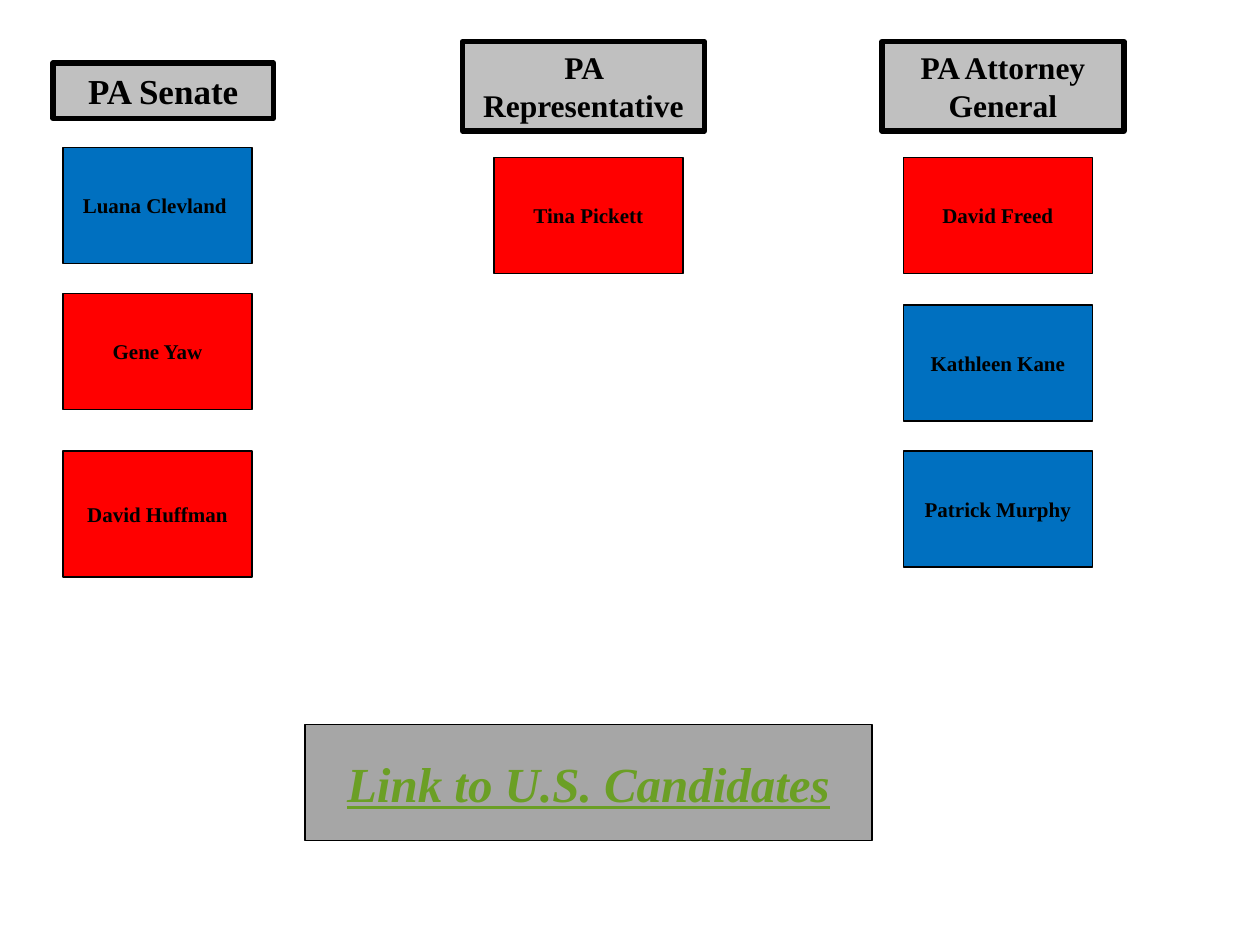
from dataclasses import dataclass

from pptx import Presentation
from pptx.dml.color import RGBColor
from pptx.enum.shapes import MSO_SHAPE
from pptx.enum.text import MSO_ANCHOR, MSO_AUTO_SIZE, PP_ALIGN
from pptx.util import Inches, Pt

RECTANGLE = MSO_SHAPE.RECTANGLE
BUTTON = MSO_SHAPE.ACTION_BUTTON_CUSTOM
TOP, MIDDLE = MSO_ANCHOR.TOP, MSO_ANCHOR.MIDDLE
GROW = MSO_AUTO_SIZE.SHAPE_TO_FIT_TEXT
CENTER = PP_ALIGN.CENTER

FONT = "Times New Roman"
COLORS = {
    "black": "000000",
    "header": "C0C0C0",
    "democrat": "0070C0",
    "republican": "FF0000",
    "link_fill": "A6A6A6",
    "link_text": "6B9F25",
}
BUTTON_WIDTH, BUTTON_HEIGHT = 1.5, 0.92


@dataclass
class Box:
    text: str
    left: float
    top: float
    width: float
    height: float
    fill: str
    size: int


@dataclass
class Candidate:
    name: str
    party: str
    top: float
    height: float = BUTTON_HEIGHT


@dataclass
class Office:
    header: Box
    button_left: float
    candidates: list[Candidate]


OFFICES = [
    Office(Box("PA Senate", 0.42, 0.5, 1.75, 0.44, "header", 20), 0.5, [
        Candidate("Luana Clevland ", "democrat", 1.17),
        Candidate("Gene Yaw", "republican", 2.33),
        Candidate("David Huffman", "republican", 3.58, 1),
    ]),
    Office(Box("PA Representative", 3.67, 0.33, 1.92, 0.71, "header", 18), 3.92, [
        Candidate("Tina Pickett", "republican", 1.25),
    ]),
    Office(Box("PA Attorney General", 7, 0.33, 1.92, 0.71, "header", 18), 7.17, [
        Candidate("David Freed", "republican", 1.25),
        Candidate("Kathleen Kane", "democrat", 2.42),
        Candidate("Patrick Murphy", "democrat", 3.58),
    ]),
]
LINK = Box("Link to U.S. Candidates", 2.42, 5.75, 4.5, BUTTON_HEIGHT, "link_fill", 28)


def color(name: str) -> RGBColor:
    return RGBColor.from_string(COLORS[name])


def draw_box(slide, box: Box, kind=BUTTON, line_width: float = 0.75,
             text_color: str = "black"):
    """Draw a filled, outlined box with centred bold text and return it."""
    shape = slide.shapes.add_shape(
        kind, Inches(box.left), Inches(box.top), Inches(box.width), Inches(box.height))
    shape.shadow.inherit = False
    shape.fill.solid()
    shape.fill.fore_color.rgb = color(box.fill)
    shape.line.color.rgb = color("black")
    shape.line.width = Pt(line_width)

    frame = shape.text_frame
    frame.word_wrap = False
    frame.vertical_anchor = MIDDLE
    paragraph = frame.paragraphs[0]
    paragraph.alignment = CENTER
    run = paragraph.add_run()
    run.text = box.text
    run.font.name = FONT
    run.font.size = Pt(box.size)
    run.font.bold = True
    run.font.color.rgb = color(text_color)
    return shape


def draw_office(slide, office: Office) -> None:
    header = draw_box(slide, office.header, RECTANGLE, 3)
    header.text_frame.word_wrap = True
    header.text_frame.vertical_anchor = TOP
    header.text_frame.auto_size = GROW
    for candidate in office.candidates:
        draw_box(slide, Box(candidate.name, office.button_left, candidate.top,
                            BUTTON_WIDTH, candidate.height, candidate.party, 12))


def draw_link(slide) -> None:
    button = draw_box(slide, LINK, text_color="link_text")
    font = button.text_frame.paragraphs[0].runs[0].font
    font.italic = True
    font.underline = True


def main() -> None:
    presentation = Presentation()
    presentation.slide_width = Inches(10)
    presentation.slide_height = Inches(7.5)
    slide = presentation.slides.add_slide(presentation.slide_layouts[6])
    for office in OFFICES:
        draw_office(slide, office)
    draw_link(slide)
    presentation.save("out.pptx")


if __name__ == "__main__":
    main()
